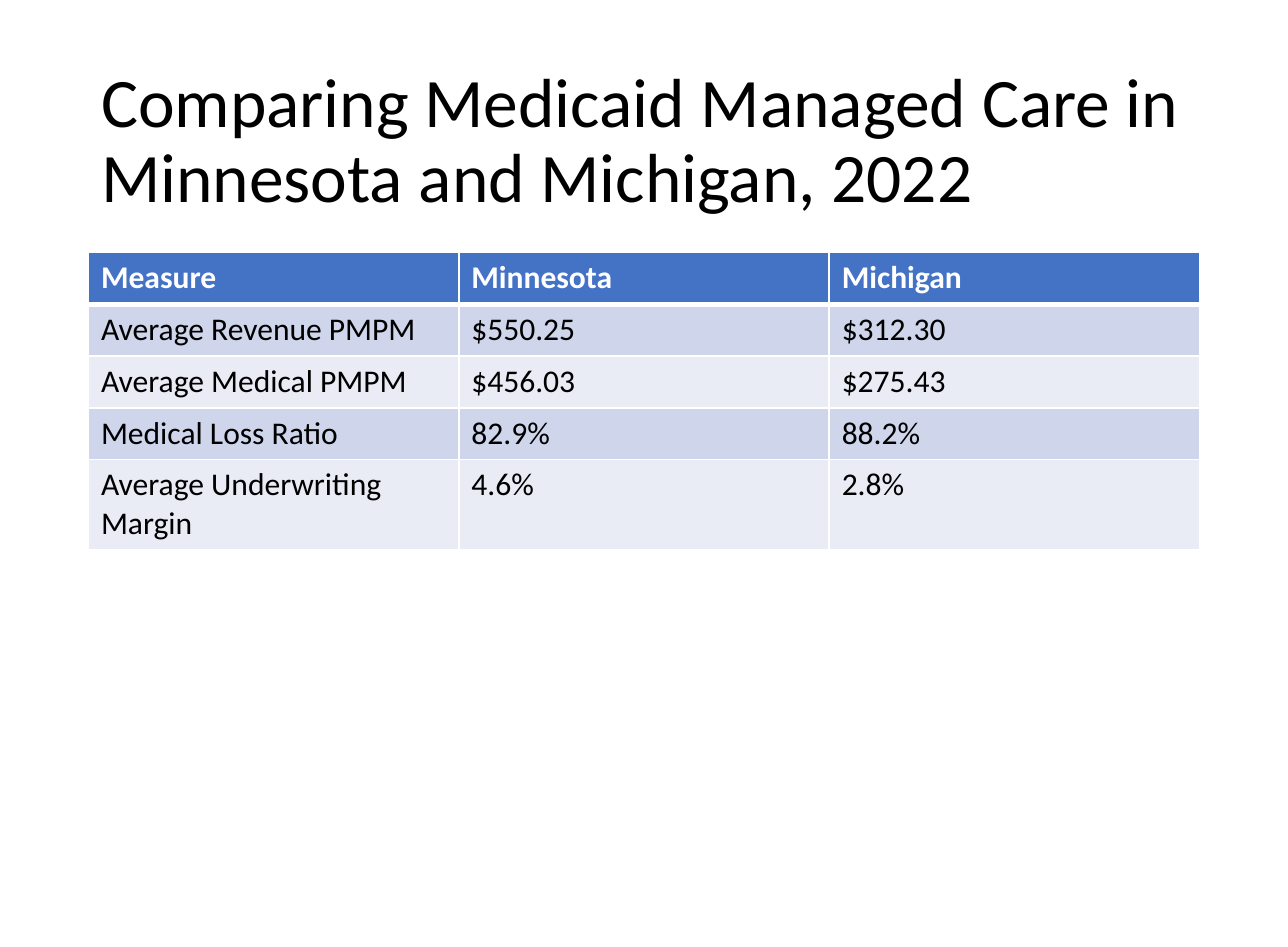
import pptx
import pptx.util
from pptx.dml.color import RGBColor
from pptx.enum.text import MSO_ANCHOR, MSO_AUTO_SIZE, PP_ALIGN
from pptx.oxml import parse_xml
from pptx.oxml.ns import nsdecls
from pptx.util import Inches

BLACK = RGBColor(0x00, 0x00, 0x00)
WHITE = RGBColor(0xFF, 0xFF, 0xFF)
BLUE = RGBColor(0x44, 0x72, 0xC4)
BAND_DARK = RGBColor(0xCF, 0xD5, 0xEA)
BAND_LIGHT = RGBColor(0xE9, 0xEB, 0xF5)

TITLE = "Comparing Medicaid Managed Care in Minnesota and Michigan, 2022"
MEASURES = [
    ("Measure", "Minnesota", "Michigan"),
    ("Average Revenue PMPM", "$550.25", "$312.30"),
    ("Average Medical PMPM", "$456.03", "$275.43"),
    ("Medical Loss Ratio", "82.9%", "88.2%"),
    ("Average Underwriting Margin", "4.6%", "2.8%"),
]
ROW_HEIGHTS = [0.41, 0.41, 0.41, 0.41, 0.7]


class SlideBuilder:
    font = "Calibri"
    left, width = Inches(0.7), Inches(8.8)

    def __init__(self, prs):
        self.s = prs.slides.add_slide(prs.slide_layouts[5])

    def style(self, p, size, color, bold=False):
        p.font.name = self.font
        p.font.size = pptx.util.Pt(size)
        p.font.color.rgb = color
        p.font.bold = bold

    def title(self, text, top, height):
        sp = self.s.shapes.title
        sp.left, sp.top, sp.width, sp.height = self.left, top, self.width, height
        tf = sp.text_frame
        tf.text = text
        tf.word_wrap = True
        tf.auto_size = MSO_AUTO_SIZE.NONE
        tf.vertical_anchor = MSO_ANCHOR.MIDDLE
        p = tf.paragraphs[0]
        p.alignment = PP_ALIGN.LEFT
        p.line_spacing = 0.9
        self.style(p, 39.6, BLACK)

    def borders(self, cell, bottom):
        tcPr = cell._tc.get_or_add_tcPr()
        for side, points in (("L", 1), ("R", 1), ("T", 1), ("B", bottom)):
            tcPr.append(parse_xml(
                f'<a:ln{side} {nsdecls("a")} w="{pptx.util.Pt(points)}"><a:solidFill>'
                f'<a:srgbClr val="{WHITE}"/></a:solidFill></a:ln{side}>'))

    def table(self, rows, top, heights):
        table = self.s.shapes.add_table(
            len(rows), len(rows[0]), self.left, top, self.width, Inches(sum(heights))).table
        for i, (values, height) in enumerate(zip(rows, heights)):
            header = i == 0
            table.rows[i].height = Inches(height)
            fill = BLUE if header else BAND_DARK if i % 2 else BAND_LIGHT
            for cell, value in zip(table.rows[i].cells, values):
                self.borders(cell, bottom=3 if header else 1)
                cell.fill.solid()
                cell.fill.fore_color.rgb = fill
                cell.text = value
                self.style(cell.text_frame.paragraphs[0], 18,
                           WHITE if header else BLACK, bold=header)


def main():
    prs = pptx.Presentation()
    prs.slide_width, prs.slide_height = Inches(10.2), Inches(7.5)
    slide = SlideBuilder(prs)

    # Heading
    slide.title(TITLE, Inches(0.4), Inches(1.45))

    # State comparison
    slide.table(MEASURES, Inches(2), ROW_HEIGHTS)

    prs.save("out.pptx")


if __name__ == "__main__":
    main()
